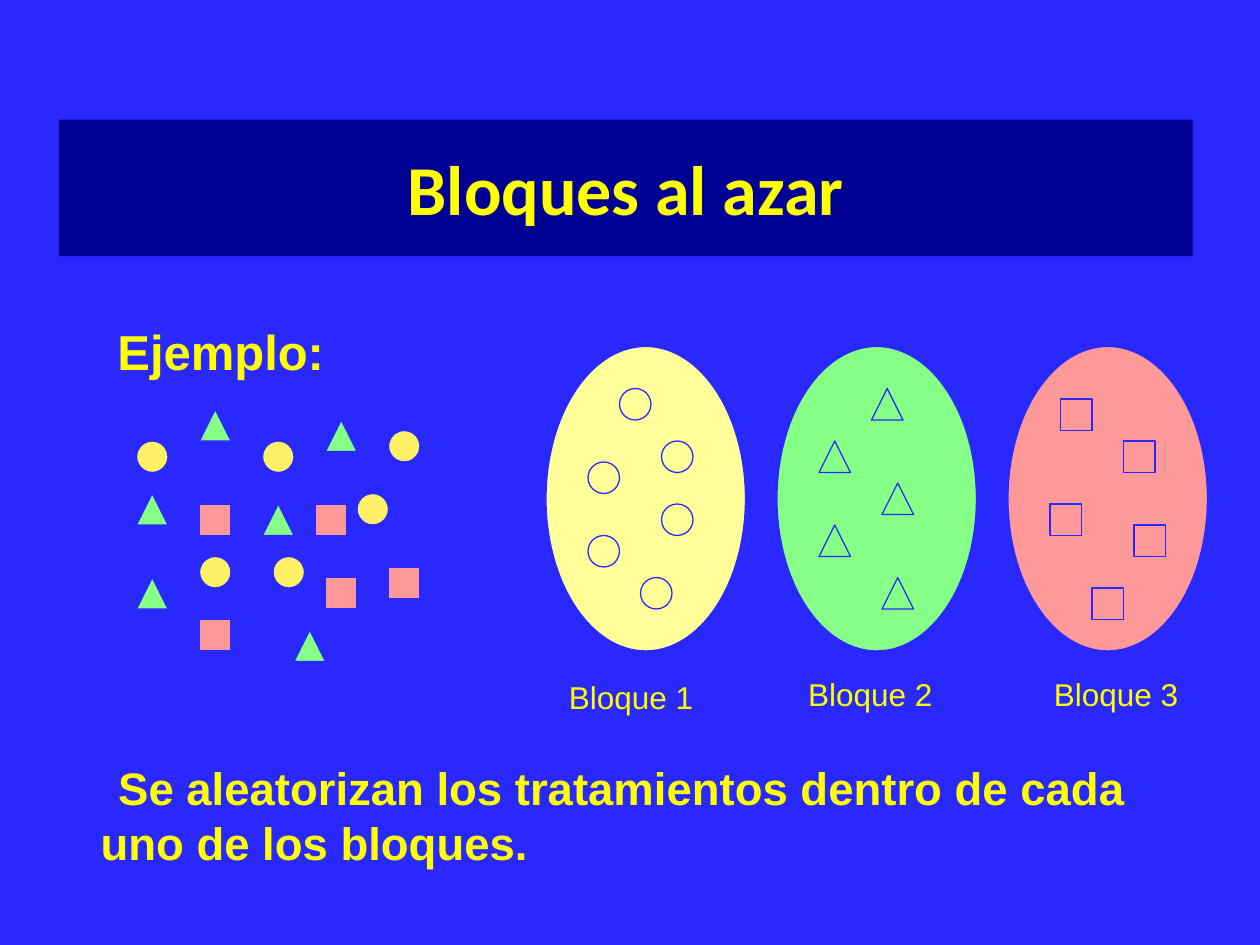
from dataclasses import dataclass

from pptx import Presentation
from pptx.dml.color import RGBColor
from pptx.enum.shapes import MSO_SHAPE
from pptx.enum.text import MSO_ANCHOR, MSO_AUTO_SIZE, PP_ALIGN
from pptx.util import Inches, Pt

CIRCLE = MSO_SHAPE.OVAL
TRIANGLE = MSO_SHAPE.ISOSCELES_TRIANGLE
SQUARE = MSO_SHAPE.RECTANGLE
CENTER = PP_ALIGN.CENTER
MIDDLE = MSO_ANCHOR.MIDDLE
FIT_SHAPE = MSO_AUTO_SIZE.SHAPE_TO_FIT_TEXT
TITLE_ONLY = 5

CELL = 1 / 12  # grid step in inches: the slide has 120 columns and 90 rows
UNIT_SIZE = 3
BLOCK_TOP, BLOCK_WIDTH, BLOCK_HEIGHT = 33, 19, 29
LABEL_WIDTH, LABEL_HEIGHT = 17, 4.8

COLORS = {
    "background": "2828FF",
    "banner": "000093",
    "text": "FFFF00",
    "yellow": "FFF167",
    "pale yellow": "FFFF99",
    "green": "86FF86",
    "pink": "FF9999",
}


@dataclass
class Block:
    name: str
    kind: int
    unit_color: str
    block_color: str
    left: float
    label_at: tuple
    mixed: list  # units before they are sorted into blocks
    members: list  # units inside the block


BLOCKS = [
    Block("Bloque 1", CIRCLE, "yellow", "pale yellow", 52, (53, 64),
          [(25, 42), (19, 53), (34, 47), (26, 53), (13, 42), (37, 41)],
          [(59, 37), (63, 42), (56, 44), (63, 48), (56, 51), (61, 55)]),
    Block("Bloque 2", TRIANGLE, "green", "green", 74, (75.8, 63.7),
          [(19, 39), (31, 40), (25, 48), (13, 47), (28, 60), (13, 55)],
          [(83, 37), (78, 42), (84, 46), (78, 50), (84, 55)]),
    Block("Bloque 3", SQUARE, "pink", "pink", 96, (99.2, 63.7),
          [(19, 48), (19, 59), (31, 55), (30, 48), (37, 54)],
          [(101, 38), (107, 42), (100, 48), (108, 50), (104, 56)]),
]


def color(name: str) -> RGBColor:
    return RGBColor.from_string(COLORS[name])


def grid(*cells: float) -> list:
    """Turn grid counts into lengths."""
    return [Inches(cell * CELL) for cell in cells]


def paint(shape, name: str) -> None:
    shape.fill.solid()
    shape.fill.fore_color.rgb = color(name)


def add_figure(page, kind: int, area: tuple, fill: str | None = None) -> None:
    """Draw a shape on the grid; without a fill only its outline shows."""
    shape = page.shapes.add_shape(kind, *grid(*area))
    shape.shadow.inherit = False
    if fill:
        paint(shape, fill)
    else:
        shape.fill.background()
    shape.line.color.rgb = color("background")
    shape.line.width = Pt(0.75)


def write(box, text: str, size: float, bold: bool = False, name: str = "Arial"):
    para = box.text_frame.paragraphs[0]
    span = para.add_run()
    span.text = text
    formats = {"size": Pt(size), "bold": bold, "name": name}
    for key, value in formats.items():
        setattr(span.font, key, value)
    span.font.color.rgb = color("text")
    return para


def add_text(page, area: tuple, text: str, size: float, bold: bool = False):
    box = page.shapes.add_textbox(*grid(*area))
    box.text_frame.word_wrap = True
    box.text_frame.auto_size = FIT_SHAPE
    return write(box, text, size, bold)


def add_title(page, area: tuple, text: str) -> None:
    title = page.shapes.title
    places = zip(("left", "top", "width", "height"), grid(*area))
    for key, value in places:
        setattr(title, key, value)
    paint(title, "banner")
    title.text_frame.vertical_anchor = MIDDLE
    write(title, text, 40, True, "Calibri").alignment = CENTER


def add_block(page, block: Block) -> None:
    for column, row in block.mixed:
        add_figure(page, block.kind, (column, row, UNIT_SIZE, UNIT_SIZE),
                   block.unit_color)
    add_figure(page, CIRCLE, (block.left, BLOCK_TOP, BLOCK_WIDTH, BLOCK_HEIGHT),
               block.block_color)
    for column, row in block.members:
        add_figure(page, block.kind, (column, row, UNIT_SIZE, UNIT_SIZE))
    add_text(page, (*block.label_at, LABEL_WIDTH, LABEL_HEIGHT), block.name, 18)


def main() -> None:
    deck = Presentation()
    deck.slide_width, deck.slide_height = Inches(10), Inches(7.5)
    page = deck.slides.add_slide(deck.slide_layouts[TITLE_ONLY])
    page.background.fill.solid()
    page.background.fill.fore_color.rgb = color("background")

    add_title(page, (5.6, 11.4, 108, 13), "Bloques al azar")
    add_text(page, (10, 30, 27, 6.8), "Ejemplo:", 28, True)
    for block in BLOCKS:
        add_block(page, block)
    closing = add_text(
        page, (8.4, 71.8, 101.3, 11.6),
        "Se aleatorizan los tratamientos dentro de cada uno de los bloques.",
        26, True)
    # First-line indent
    closing._p.get_or_add_pPr().set("indent", str(Inches(0.14)))

    deck.save("out.pptx")


if __name__ == "__main__":
    main()
